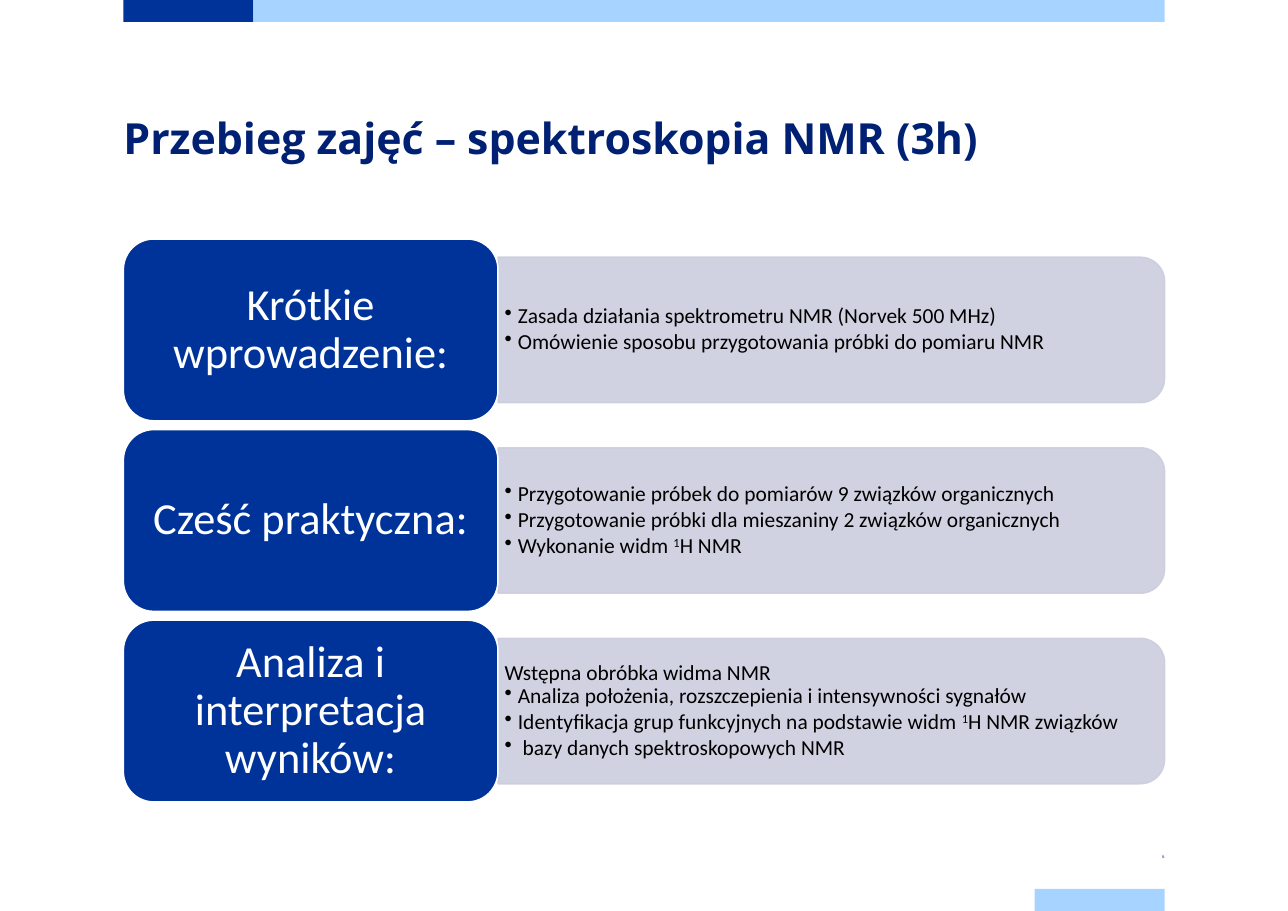
from lxml.etree import SubElement
from pptx import Presentation
from pptx.dml.color import RGBColor
from pptx.enum.shapes import MSO_SHAPE
from pptx.enum.text import MSO_ANCHOR, PP_ALIGN
from pptx.oxml.ns import qn
from pptx.util import Inches, Pt

NAVY = RGBColor(0x00, 0x20, 0x73)
BLUE = RGBColor(0x00, 0x33, 0x99)
SKY = RGBColor(0xA6, 0xD3, 0xFF)
LAVENDER = RGBColor(0xCC, 0xCE, 0xDE)
WHITE = RGBColor(0xFF, 0xFF, 0xFF)
BLACK = RGBColor(0x00, 0x00, 0x00)

LEFT, HEADING_WIDTH, PANEL_WIDTH = 1.12, 3.4, 6.05
FIRST_TOP, ROW_STEP = 2.17, 1.73
HEADING_HEIGHT, PANEL_HEIGHT, TEXT_HEIGHT = 1.65, 1.32, 1.19

# Each panel line is (text, has bullet); "^1" marks a raised 1.
STAGES = [
    ("Krótkie wprowadzenie:", [
        ("Zasada działania spektrometru NMR (Norvek 500 MHz)", True),
        ("Omówienie sposobu przygotowania próbki do pomiaru NMR", True)]),
    ("Cześć praktyczna:", [
        ("Przygotowanie próbek do pomiarów 9 związków organicznych", True),
        ("Przygotowanie próbki dla mieszaniny 2 związków organicznych", True),
        ("Wykonanie widm ^1H NMR", True)]),
    ("Analiza i interpretacja wyników:", [
        ("Wstępna obróbka widma NMR", False),
        ("Analiza położenia, rozszczepienia i intensywności sygnałów", True),
        ("Identyfikacja grup funkcyjnych na podstawie widm ^1H NMR związków", True),
        (" bazy danych spektroskopowych NMR", True)]),
]


def set_frame(frame, anchor=MSO_ANCHOR.MIDDLE, inset=(0, 0)):
    """Wrap the text and set its anchor and (side, top and bottom) insets."""
    frame.word_wrap = True
    frame.vertical_anchor = anchor
    frame.margin_left = frame.margin_right = Inches(inset[0])
    frame.margin_top = frame.margin_bottom = Inches(inset[1])


def add_bullet(para):
    properties = para._p.get_or_add_pPr()
    properties.set("marL", str(Inches(0.12)))
    properties.set("indent", str(-Inches(0.12)))
    SubElement(properties, qn("a:buChar"), char="•")


def write(para, text, size, color, font="Calibri", bold=False,
          align=PP_ALIGN.LEFT, spacing=0.9, after=0, bullet=False):
    para.alignment = align
    para.line_spacing = spacing
    para.space_after = Pt(after)
    if bullet:
        add_bullet(para)
    start, mark, rest = text.partition("^1")
    for piece, raised in ((start, False), (mark[1:], True), (rest, False)):
        if piece:
            span = para.add_run()
            span.text = piece
            span.font.name = font
            span.font.size = Pt(size)
            span.font.bold = bold
            span.font.color.rgb = color
            if raised:
                span.font._element.set("baseline", "30000")


def set_opacity(fill_format, percent):
    color = fill_format._xPr.find(qn("a:solidFill"))[0]
    SubElement(color, qn("a:alpha"), val=str(percent * 1000))


class Slide:
    def __init__(self, deck):
        self.page = deck.slides.add_slide(deck.slide_layouts[6])

    def shape(self, kind, left, top, width, height, fill, line=None):
        shape = self.page.shapes.add_shape(
            kind, Inches(left), Inches(top), Inches(width), Inches(height))
        shape.shadow.inherit = False
        shape.fill.solid()
        shape.fill.fore_color.rgb = fill
        if line is None:
            shape.line.fill.background()
        else:
            shape.line.color.rgb = line
            shape.line.width = Pt(1)
        return shape

    def text(self, left, top, width, height, **frame_format):
        box = self.page.shapes.add_textbox(
            Inches(left), Inches(top), Inches(width), Inches(height))
        set_frame(box.text_frame, **frame_format)
        return box.text_frame

    def panel(self, left, middle, lines):
        """Panel with rounded right corners, made by turning the shape a quarter."""
        panel = self.shape(
            MSO_SHAPE.ROUND_2_SAME_RECTANGLE,
            left + (PANEL_WIDTH - PANEL_HEIGHT) / 2, middle - PANEL_WIDTH / 2,
            PANEL_HEIGHT, PANEL_WIDTH, LAVENDER, LAVENDER)
        panel.rotation = 90
        set_opacity(panel.fill, 90)
        set_opacity(panel.line.fill, 90)
        frame = self.text(left, middle - TEXT_HEIGHT / 2, 5.98, TEXT_HEIGHT,
                          inset=(0.06, 0.03))
        for index, (line, bullet) in enumerate(lines):
            para = frame.add_paragraph() if index else frame.paragraphs[0]
            write(para, line, 14, BLACK, bullet=bullet, after=2 if bullet else 0)

    def heading(self, left, top, text):
        heading = self.shape(MSO_SHAPE.ROUNDED_RECTANGLE, left, top,
                             HEADING_WIDTH, HEADING_HEIGHT, BLUE, WHITE)
        set_frame(heading.text_frame, inset=(0.12, 0.06))
        write(heading.text_frame.paragraphs[0], text, 29, WHITE,
              align=PP_ALIGN.CENTER)


def main():
    deck = Presentation()
    deck.slide_width, deck.slide_height = Inches(11.69), Inches(8.27)
    slide = Slide(deck)

    for left, top, width, color in ((LEFT, 0, 1.18, BLUE), (2.3, 0, 8.27, SKY),
                                    (9.39, 8.07, 1.18, SKY)):
        slide.shape(MSO_SHAPE.RECTANGLE, left, top, width, 0.2, color)

    title = slide.text(LEFT, 0.98, 9.45, 1.18, anchor=MSO_ANCHOR.TOP)
    write(title.paragraphs[0], "Przebieg zajęć – spektroskopia NMR (3h)", 28,
          NAVY, font="Open Sans", bold=True, spacing=Pt(36))

    number = slide.text(9.39, 7.68, 1.18, 0.2, inset=(0, 0.08))
    write(number.paragraphs[0], "6", 2.8, NAVY, font="Open Sans",
          align=PP_ALIGN.RIGHT, spacing=0.7, after=6)

    for row, (heading, lines) in enumerate(STAGES):
        top = FIRST_TOP + row * ROW_STEP
        slide.panel(LEFT + HEADING_WIDTH, top + HEADING_HEIGHT / 2, lines)
        slide.heading(LEFT, top, heading)

    deck.save("out.pptx")


if __name__ == "__main__":
    main()
